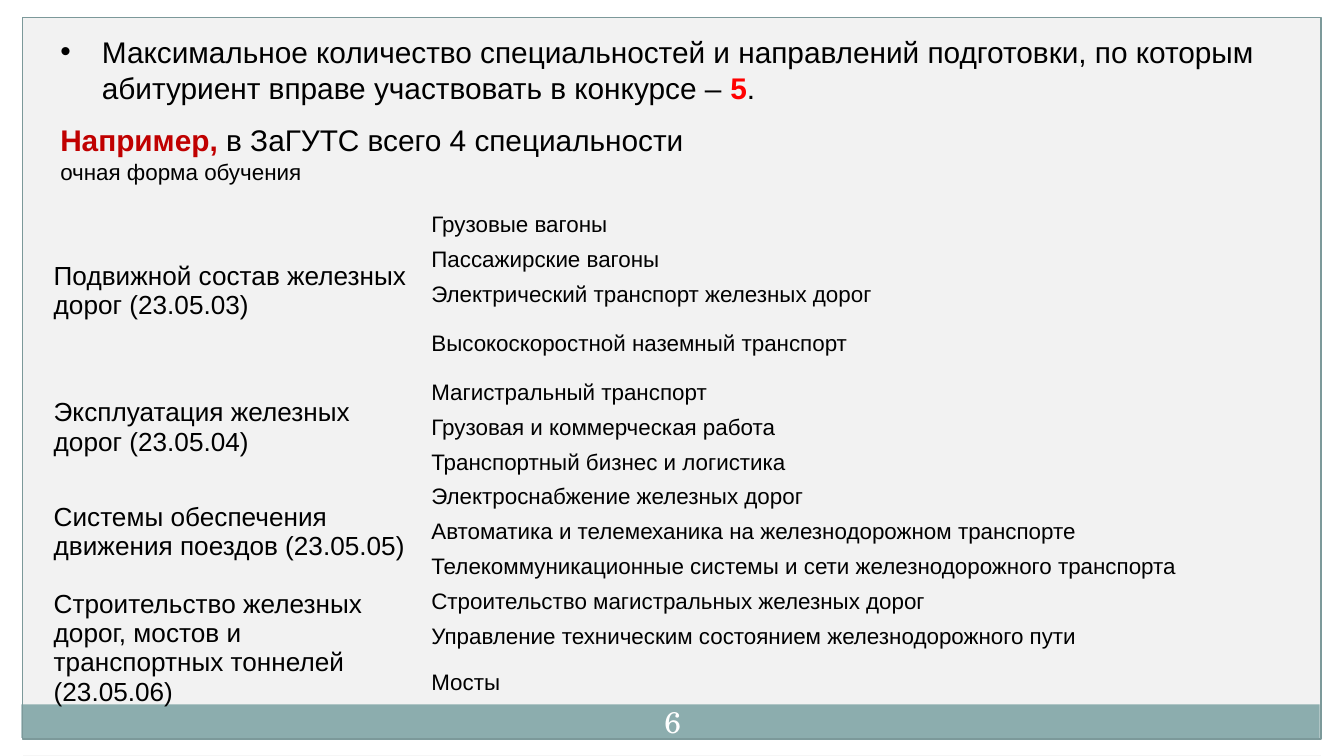
import pptx
import pptx.util
import pptx.oxml
import pptx.dml.color
import pptx.enum.shapes
import pptx.enum.text

Inches, Pt = pptx.util.Inches, pptx.util.Pt
Align, Anchor = pptx.enum.text.PP_ALIGN, pptx.enum.text.MSO_ANCHOR
RECT = pptx.enum.shapes.MSO_SHAPE.RECTANGLE

WIDE = 10
HIGH = WIDE * 9 / 16
BLACK, WHITE, GREY = "000000", "FFFFFF", "F2F2F2"
TEAL, EDGE = "8CADAE", "7C999A"
PLAIN = "{2D5ABB26-0587-4C30-8999-92F81FD0307C}"  # no style, no grid
SPACE = 'xmlns:a="http://schemas.openxmlformats.org/drawingml/2006/main"'

# box, fill, line
PANELS = [
    ((0, 5.5, WIDE, 0.12), WHITE, None),
    ((0, 0, WIDE, 0.13), WHITE, None),
    ((9.83, 0, 0.17, HIGH), WHITE, None),
    ((0, 0, 0.17, HIGH), WHITE, None),
    ((0.16, 5.24, 9.66, 0.25), TEAL, None),
    ((0.17, 0.13, 9.66, 5.37), None, EDGE),
]

# paragraph format, then runs of text, size, colour, bold
INTRO = [
    ({}, [
        ("Максимальное количество специальностей и направлений подготовки, "
         "по которым абитуриент вправе участвовать в конкурсе – ", 16, BLACK, False),
        ("5", 16, "FF0000", True),
        (".", 16, BLACK, False),
    ]),
    ({"space_before": Pt(9)}, [
        ("Например,", 16, "C00000", True),
        (" в ЗаГУТС всего 4 специальности", 16, BLACK, False),
    ]),
    ({}, [("очная форма обучения", 12, BLACK, False)]),
]

GROUPS = [
    ("Подвижной состав железных дорог (23.05.03)", [
        "Грузовые вагоны",
        "Пассажирские вагоны",
        "Электрический транспорт железных дорог",
        "Высокоскоростной наземный транспорт"]),
    ("Эксплуатация железных дорог (23.05.04)", [
        "Магистральный транспорт",
        "Грузовая и коммерческая работа",
        "Транспортный бизнес и логистика"]),
    ("Системы обеспечения движения поездов (23.05.05)", [
        "Электроснабжение железных дорог",
        "Автоматика и телемеханика на железнодорожном транспорте",
        "Телекоммуникационные системы и сети железнодорожного транспорта"]),
    ("Строительство железных дорог, мостов и транспортных тоннелей (23.05.06)", [
        "Строительство магистральных железных дорог",
        "Управление техническим состоянием железнодорожного пути",
        "Мосты"]),
]
COLS = [2.81, 6.52]
ROW = 0.26
TALL = {3: 0.47, 12: 0.43}


def color(code):
    return pptx.dml.color.RGBColor.from_string(code)


def inch(box):
    return [Inches(n) for n in box]


def style(item, values):
    for name, value in values.items():
        setattr(item, name, value)


def write(para, text, size, code=BLACK, bold=False, face="Arial"):
    run = para.add_run()
    run.text = text
    style(run.font, {"size": Pt(size), "name": face, "bold": bold})
    run.font.color.rgb = color(code)


def panel(slide, box, fill, line):
    shape = slide.shapes.add_shape(RECT, *inch(box))
    shape.shadow.inherit = False
    if fill:
        shape.fill.solid()
        shape.fill.fore_color.rgb = color(fill)
    else:
        shape.fill.background()
    if line:
        shape.line.color.rgb = color(line)
        shape.line.width = Pt(0.75)
    else:
        shape.line.fill.background()


def bullet(para):
    props = para._p.get_or_add_pPr()
    props.set("marL", str(Inches(0.31)))
    props.set("indent", str(Inches(-0.31)))
    for mark in (f'<a:buClr {SPACE}><a:srgbClr val="{BLACK}"/></a:buClr>',
                 f'<a:buFont {SPACE} typeface="Arial"/>',
                 f'<a:buChar {SPACE} char="•"/>'):
        props.append(pptx.oxml.parse_xml(mark))


def intro(slide):
    frame = slide.shapes.add_textbox(*inch((0.35, 0.2, 9.29, 1.78))).text_frame
    frame.word_wrap = True
    for i, (form, runs) in enumerate(INTRO):
        para = frame.add_paragraph() if i else frame.paragraphs[0]
        style(para, form)
        for run in runs:
            write(para, *run)
    bullet(frame.paragraphs[0])


def grid(slide):
    count = sum(len(items) for _, items in GROUPS)
    table = slide.shapes.add_table(
        count, 2, *inch((0.33, 1.54, sum(COLS), ROW * count))).table
    style(table, {"first_row": False, "horz_banding": False})
    table._tbl.tblPr[0].text = PLAIN
    for col, width in zip(table.columns, COLS):
        col.width = Inches(width)
    for i, row in enumerate(table.rows):
        row.height = Inches(TALL.get(i, ROW))
    for cell in table.iter_cells():
        style(cell, {"margin_left": Inches(0.07), "margin_right": Inches(0.07),
                     "margin_top": 0, "margin_bottom": 0,
                     "vertical_anchor": Anchor.MIDDLE})
        cell.fill.background()
        # keeps empty merged cells from stretching their rows
        cell.text_frame.paragraphs[0]._p.get_or_add_endParaRPr().set("sz", "1200")
    top = 0
    for title, items in GROUPS:
        head = table.cell(top, 0)
        head.merge(table.cell(top + len(items) - 1, 0))
        write(head.text_frame.paragraphs[0], title, 14)
        for i, item in enumerate(items, top):
            write(table.cell(i, 1).text_frame.paragraphs[0], item, 12)
        top += len(items)


def number(slide):
    frame = slide.shapes.add_textbox(*inch((4.67, 5.19, 0.67, 0.36))).text_frame
    pad = Inches(0.05)
    style(frame, {"word_wrap": True, "vertical_anchor": Anchor.MIDDLE,
                  "margin_left": pad, "margin_right": pad,
                  "margin_top": pad, "margin_bottom": pad})
    para = frame.paragraphs[0]
    para.alignment = Align.CENTER
    write(para, "6", 16, WHITE, face="TeX Gyre Schola")


def main():
    deck = pptx.Presentation()
    style(deck, {"slide_width": Inches(WIDE), "slide_height": Inches(HIGH)})
    slide = deck.slides.add_slide(deck.slide_layouts[6])
    slide.background.fill.solid()
    slide.background.fill.fore_color.rgb = color(GREY)
    for box, fill, line in PANELS:
        panel(slide, box, fill, line)
    intro(slide)
    number(slide)
    grid(slide)
    deck.save("out.pptx")


if __name__ == "__main__":
    main()
